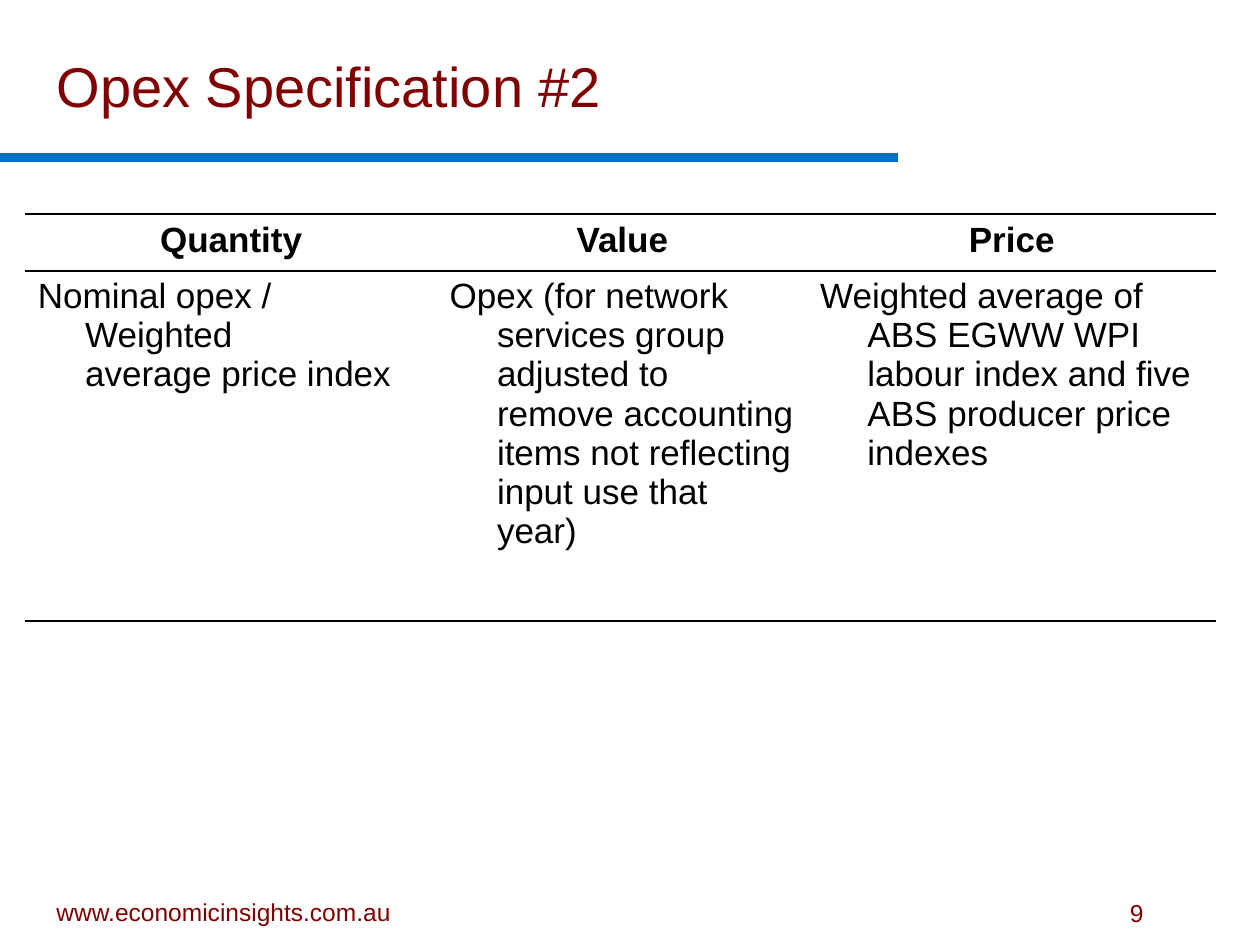
from lxml.etree import SubElement
from pptx import Presentation
from pptx.dml.color import RGBColor
from pptx.enum.shapes import MSO_CONNECTOR
from pptx.enum.text import MSO_ANCHOR as Anchor, PP_ALIGN as Align
from pptx.oxml.ns import qn
from pptx.util import Pt

COLORS = {"maroon": "800000", "blue": "0070C0", "black": "000000"}
NO_GRID_STYLE = "{2D5ABB26-0587-4C30-8999-92F81FD0307C}"


def style_font(paragraph, size, color, bold=False):
    font = paragraph.font
    font.name, font.size, font.bold = "Arial", Pt(size), bold
    font.color.rgb = RGBColor.from_string(COLORS[color])


def add_border(cell, side, width):
    line = SubElement(cell._tc.get_or_add_tcPr(), qn(f"a:{side}"), w=str(Pt(width)))
    fill = SubElement(line, qn("a:solidFill"))
    SubElement(fill, qn("a:srgbClr"), val=COLORS["black"])


presentation = Presentation()
presentation.slide_width, presentation.slide_height = Pt(720), Pt(540)
slide = presentation.slides.add_slide(presentation.slide_layouts[6])

# Rule under the title
rule = slide.shapes.add_connector(MSO_CONNECTOR.STRAIGHT, Pt(0), Pt(90), Pt(513), Pt(90))
rule.line.color.rgb = RGBColor.from_string(COLORS["blue"])
rule.line.width = Pt(5)
SubElement(rule._element.spPr, qn("a:effectLst"))

# Title, web address and page number
labels = [
    ("Opex Specification #2", 25.2, 25.9, 487.4, 45.4, 32, Align.LEFT, Anchor.BOTTOM, True),
    ("www.economicinsights.com.au", 14.4, 508.3, 226.8, 24.5, 14, Align.CENTER, Anchor.BOTTOM, True),
    ("9", 638.6, 509.8, 31.7, 23.8, 14, Align.LEFT, Anchor.TOP, False),
]
for text, left, top, width, height, size, align, anchor, wrap in labels:
    box = slide.shapes.add_textbox(Pt(left), Pt(top), Pt(width), Pt(height))
    frame = box.text_frame
    frame.word_wrap, frame.vertical_anchor = wrap, anchor
    frame.text = text
    paragraph = frame.paragraphs[0]
    paragraph.alignment = align
    style_font(paragraph, size, "maroon")

# Opex table
rows = [
    ["Quantity", "Value", "Price"],
    [
        "Nominal opex / Weighted \vaverage price index",
        "Opex (for network services group adjusted to remove accounting "
        "items not reflecting input use that year)",
        "Weighted average of ABS EGWW WPI labour index and five ABS producer price indexes",
    ],
]
column_widths = [235.4, 211.7, 233.3]
row_heights = [32.4, 200.2]
table = slide.shapes.add_table(
    len(rows), len(column_widths), Pt(14.4), Pt(122.4),
    Pt(sum(column_widths)), Pt(sum(row_heights))).table
table.first_row = table.horz_banding = False
table._tbl.tblPr.find(qn("a:tableStyleId")).text = NO_GRID_STYLE
for column, width in zip(table.columns, column_widths):
    column.width = Pt(width)

for row_index, texts in enumerate(rows):
    table.rows[row_index].height = Pt(row_heights[row_index])
    header = row_index == 0
    for column_index, text in enumerate(texts):
        cell = table.cell(row_index, column_index)
        cell.text_frame.text = text
        paragraph = cell.text_frame.paragraphs[0]
        paragraph.alignment = Align.CENTER if header else Align.LEFT
        properties = paragraph._p.get_or_add_pPr()
        properties.set("marL", str(Pt(27)))
        properties.set("indent", str(Pt(-27)))
        if not header:
            paragraph.space_after = Pt(4)
        style_font(paragraph, 20, "black", bold=header)
        # Horizontal borders only, ahead of the fill
        add_border(cell, "lnT", 1.5)
        add_border(cell, "lnB", 1.5)
        cell.fill.background()

presentation.save("out.pptx")
